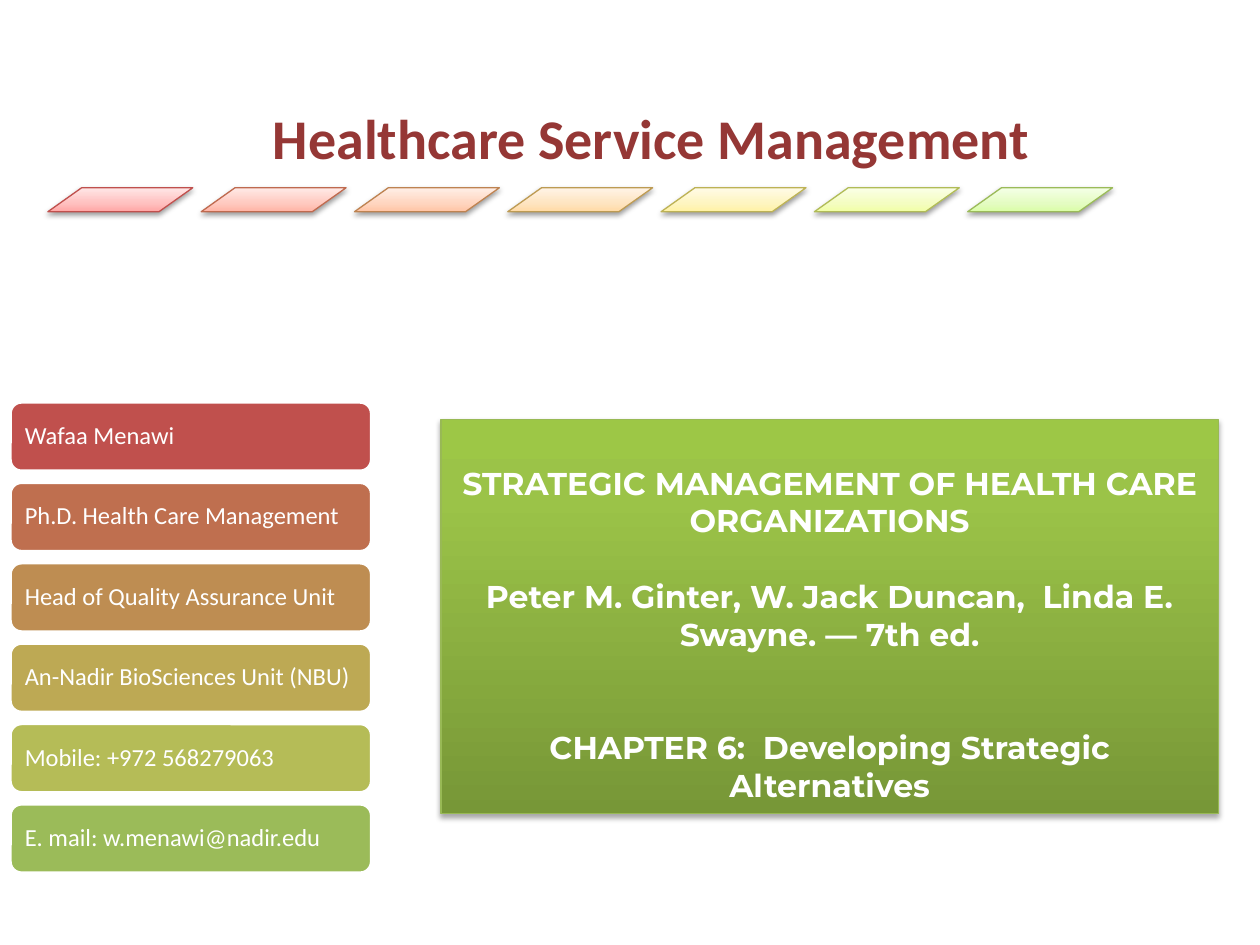
from copy import deepcopy

from lxml import etree
from pptx import Presentation
from pptx.dml.color import RGBColor
from pptx.enum.shapes import MSO_SHAPE
from pptx.enum.text import MSO_ANCHOR, PP_ALIGN
from pptx.oxml.ns import qn
from pptx.util import Inches, Pt

PARALLELOGRAM = MSO_SHAPE.PARALLELOGRAM
ROUNDED = MSO_SHAPE.ROUNDED_RECTANGLE
RECTANGLE = MSO_SHAPE.RECTANGLE
LEFT, CENTER = PP_ALIGN.LEFT, PP_ALIGN.CENTER
TOP, MIDDLE, BOTTOM = MSO_ANCHOR.TOP, MSO_ANCHOR.MIDDLE, MSO_ANCHOR.BOTTOM


def rgb(code):
    return RGBColor.from_string(code)


WHITE = rgb("FFFFFF")
DARK_RED = rgb("953735")
PANEL_LINE = rgb("98B955")

TITLE = "Healthcare Service Management"

# line colour, then gradient colours from bottom to top
RIBBON = [
    (rgb("C0504D"), (rgb("FFA6A5"), rgb("FFC0BF"), rgb("FFE7E7"))),
    (rgb("BF6A4F"), (rgb("FFB4A5"), rgb("FFC9BF"), rgb("FFEAE7"))),
    (rgb("BE8351"), (rgb("FFC5A5"), rgb("FFD5BF"), rgb("FFEFE7"))),
    (rgb("BD9B53"), (rgb("FFDAA5"), rgb("FEE4C0"), rgb("FFF4E7"))),
    (rgb("BDB255"), (rgb("FFF2A5"), rgb("FEF5C0"), rgb("FFFBE7"))),
    (rgb("B1BC57"), (rgb("F1FEA6"), rgb("F4FDC1"), rgb("FBFFE7"))),
    (rgb("9BBB59"), (rgb("DAFDA7"), rgb("E4FCC2"), rgb("F5FFE7"))),
]
RIBBON_STOPS = (0, 0.35, 1)

CONTACT = [
    ("Wafaa Menawi", rgb("C0504D")),
    ("Ph.D. Health Care Management", rgb("BF6F4F")),
    ("Head of Quality Assurance Unit", rgb("BE8D52")),
    ("An-Nadir BioSciences Unit (NBU)", rgb("BDA954")),
    ("Mobile: +972 568279063", rgb("B5BC57")),
    ("E. mail: w.menawi@nadir.edu", rgb("9BBB59")),
]

# text and the space before it in points
BOOK = [
    ("STRATEGIC MANAGEMENT OF HEALTH CARE ORGANIZATIONS", 0),
    ("Peter M. Ginter, W. Jack Duncan,  Linda E. Swayne. — 7th ed.", 21.6),
    ("CHAPTER 6:  Developing Strategic Alternatives", 43.2),
]
PANEL_COLORS = (rgb("779737"), rgb("9BC348"), rgb("9DC746"))
PANEL_STOPS = (0, 0.8, 1)


def add_shape(s, kind, box, line, width):
    sp = s.shapes.add_shape(kind, *map(Inches, box))
    sp.shadow.inherit = False
    sp.line.color.rgb = line
    sp.line.width = Pt(width)
    return sp


def set_gradient(sp, colors, positions):
    """Fill upwards through three colours."""
    sp.fill.gradient()
    sp.fill.gradient_angle = 90
    stop_list = sp._element.spPr.find(".//" + qn("a:gsLst"))
    stop_list.append(deepcopy(stop_list[-1]))
    for stop, color, position in zip(sp.fill.gradient_stops, colors, positions):
        stop.color.rgb = color
        stop.position = position


def add_drop_shadow(sp, distance, opacity):
    effects = sp._element.spPr.find(qn("a:effectLst"))
    shadow = etree.SubElement(effects, qn("a:outerShdw"), blurRad=str(Pt(3.1)),
                              dist=str(Pt(distance)), dir="5400000", rotWithShape="0")
    color = etree.SubElement(shadow, qn("a:srgbClr"), val="000000")
    etree.SubElement(color, qn("a:alpha"), val=str(opacity * 1000))


def set_frame(sp, anchor, left, top, right, bottom):
    tf = sp.text_frame
    tf.word_wrap = True
    tf.vertical_anchor = anchor
    tf.margin_left, tf.margin_top = Inches(left), Inches(top)
    tf.margin_right, tf.margin_bottom = Inches(right), Inches(bottom)
    return tf


def add_text(p, text, font, size, color, align, bold=False):
    p.alignment = align
    r = p.add_run()
    r.text = text
    r.font.name, r.font.size, r.font.bold = font, Pt(size), bold
    r.font.color.rgb = color


prs = Presentation()
prs.slide_width, prs.slide_height = Inches(10), Inches(7.5)
s = prs.slides.add_slide(prs.slide_layouts[6])

title = s.shapes.add_textbox(*map(Inches, (0.38, 0.99, 9.58, 0.5)))
p = set_frame(title, BOTTOM, 0.13, 0.13, 0.13, 0.13).paragraphs[0]
p.line_spacing = 0.9
add_text(p, TITLE, "Calibri", 32, DARK_RED, CENTER, bold=True)

ribbon_step = (7.68 - 0.38) / (len(RIBBON) - 1)
for i, (line, colors) in enumerate(RIBBON):
    sp = add_shape(s, PARALLELOGRAM, (0.38 + i * ribbon_step, 1.49, 1.15, 0.19), line, 0.75)
    sp.adjustments[0] = 1.41
    set_gradient(sp, colors, RIBBON_STOPS)
    add_drop_shadow(sp, 1.6, 38)

contact_step = (6.38 - 3.19) / (len(CONTACT) - 1)
for i, (text, color) in enumerate(CONTACT):
    sp = add_shape(s, ROUNDED, (0.08, 3.19 + i * contact_step, 2.87, 0.55), WHITE, 2)
    sp.fill.solid()
    sp.fill.fore_color.rgb = color
    p = set_frame(sp, MIDDLE, 0.09, 0.06, 0.09, 0.06).paragraphs[0]
    p.line_spacing = 0.9
    add_text(p, text, "Calibri", 14, WHITE, LEFT)

panel = add_shape(s, RECTANGLE, (3.5, 3.33, 6.17, 3.13), PANEL_LINE, 0.75)
set_gradient(panel, PANEL_COLORS, PANEL_STOPS)
add_drop_shadow(panel, 1.8, 35)
tf = set_frame(panel, TOP, 0.1, 0.35, 0.1, 0.05)
for i, (text, gap) in enumerate(BOOK):
    p = tf.add_paragraph() if i else tf.paragraphs[0]
    p.space_before = Pt(gap)
    add_text(p, text, "Montserrat", 18, WHITE, CENTER, bold=True)

prs.save("out.pptx")
